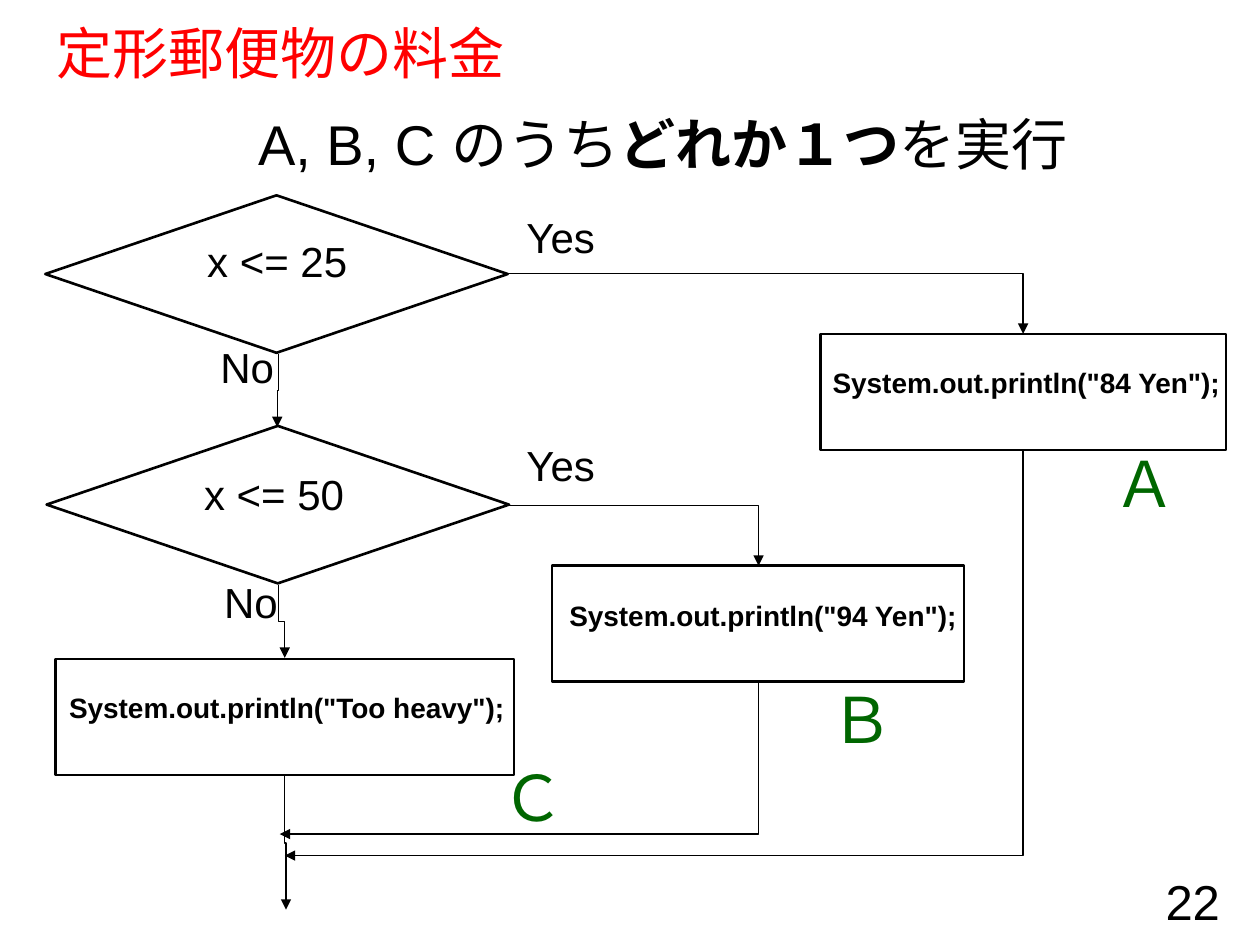
from lxml.etree import SubElement as Sub
from pptx import Presentation
from pptx.dml.color import RGBColor as Rgb
from pptx.enum.shapes import MSO_CONNECTOR as Link, MSO_SHAPE as Shape
from pptx.enum.text import MSO_ANCHOR as Anchor, PP_ALIGN as Align
from pptx.oxml.ns import qn
from pptx.util import Inches, Pt

INK, RED, GREEN = "000000", "FF0000", "006600"


def hue(code):
    """Turn a hex string into a colour."""
    return Rgb.from_string(code)


class Chart:
    """Draw flow chart parts on a grid of 100 columns by 75 rows."""

    face = "Arial"

    def __init__(self, deck):
        """Open a title-only slide and measure the grid cell."""
        self.col = deck.slide_width / 100
        self.row = deck.slide_height / 75
        self.slide = deck.slides.add_slide(deck.slide_layouts[5])
        self.shapes = self.slide.shapes

    def span(self, x, y, w, h):
        """Give a grid box as slide lengths."""
        return [round(n * u) for n, u in zip((x, y, w, h), (self.col, self.row) * 2)]

    def style(self, para, size, tint, bold=False):
        """Format every run of a paragraph."""
        for run in para.runs:
            font = run.font
            font.name, font.size, font.bold = self.face, Pt(size), bold
            font.color.rgb = hue(tint)

    def title(self, text, box):
        """Place and format the title."""
        head = self.shapes.title
        head.left, head.top, head.width, head.height = self.span(*box)
        frame = head.text_frame
        frame.text, frame.vertical_anchor = text, Anchor.MIDDLE
        para = frame.paragraphs[0]
        para.alignment, para.line_spacing = Align.LEFT, 0.9
        self.style(para, 32, RED)

    def text(self, text, box, size=24, tint=INK, bold=False, wrap=False,
             align=Align.LEFT, anchor=Anchor.TOP):
        """Add a text box and return its paragraph."""
        frame = self.shapes.add_textbox(*self.span(*box)).text_frame
        frame.text, frame.word_wrap, frame.vertical_anchor = text, wrap, anchor
        para = frame.paragraphs[0]
        para.alignment = align
        self.style(para, size, tint, bold)
        return para

    def node(self, kind, box):
        """Add an outlined flow chart symbol."""
        node = self.shapes.add_shape(kind, *self.span(*box))
        node.shadow.inherit = False
        node.fill.background()
        node.line.color.rgb, node.line.width = hue(INK), Pt(1.5)

    def test(self, text, box, label):
        """Add a decision with its condition."""
        self.node(Shape.FLOWCHART_DECISION, box)
        self.text(text, label, wrap=True, align=Align.CENTER)

    def step(self, code, box, label, mark, spot):
        """Add a process with its code and its letter."""
        self.node(Shape.FLOWCHART_PROCESS, box)
        self.text(code, label, 16, bold=True)
        self.text(mark, (*spot, 7.1, 7.1), 36, GREEN)

    def arrow(self, start, end, bends=1, down=True):
        """Add an elbow arrow that leaves downward or to the right."""
        x, y, r, b = self.span(*start, *end)
        wide, tall = abs(r - x), abs(b - y)
        left, top = min(x, r), min(y, b)
        if down:
            left, top = left + (wide - tall) // 2, top + (tall - wide) // 2
            wide, tall = tall, wide
        link = self.shapes.add_connector(Link.ELBOW, left, top, left + wide, top + tall)
        link.line.color.rgb, link.line.width = hue(INK), Pt(0.75)
        prop = link.element.spPr
        prop.find(qn("a:prstGeom")).set("prst", f"bentConnector{bends + 1}")
        if down:
            form = prop.find(qn("a:xfrm"))
            form.set("rot", str(90 * 60000))
            if r > x:
                form.set("flipV", "1")
        Sub(prop.find(qn("a:ln")), qn("a:tailEnd"), type="triangle")
        Sub(prop, qn("a:effectLst"))


def main():
    """Build the postage flow chart."""
    deck = Presentation()
    deck.slide_width, deck.slide_height = Inches(10), Inches(7.5)
    flow = Chart(deck)
    flow.title("定形郵便物の料金", (3.5, 1.9, 92.5, 5.1))

    lead = flow.text("A, B, C のうち", (19.5, 8.2, 70, 6.4), 32)
    for part in ("どれか１つ", "を実行"):
        lead.add_run().text = part
    flow.style(lead, 32, INK)
    lead.runs[1].font.bold = True

    flow.test("x <= 25", (3.6, 15.5, 36.7, 12.5), (10.2, 18.2, 23.6, 7))
    flow.test("x <= 50", (3.7, 33.8, 36.7, 12.5), (9.5, 36.7, 24.5, 7))

    steps = (
        ('System.out.println("84 Yen");', (65.1, 26.5, 32.2, 9.2),
         (65.1, 28.5, 34, 5.7), "Ａ", (87.4, 34.8)),
        ('System.out.println("94 Yen");', (43.8, 44.9, 32.7, 9.2),
         (44.2, 47, 34, 5.7), "Ｂ", (64.9, 53.5)),
        ('System.out.println("Too heavy");', (4.4, 52.3, 36.4, 9.2),
         (4.5, 54.3, 38, 4), "Ｃ", (38.8, 59.7)),
    )
    for step in steps:
        flow.step(*step)

    for word, x, y in (("Yes", 40.8, 16.3), ("Yes", 40.8, 34.4),
                       ("No", 16.5, 26.6), ("No", 16.8, 45.3)):
        flow.text(word, (x, y, 8, 4))

    flow.arrow((40.3, 21.7), (81.2, 26.5), down=False)
    flow.arrow((40.4, 40.1), (60.2, 44.9), down=False)
    flow.arrow((22.1, 28.1), (22, 33.9), 2)
    flow.arrow((22.1, 46.4), (22.6, 52.2), 2)
    flow.arrow((22.6, 61.6), (22.7, 72.2), 2)
    flow.arrow((60.2, 54.1), (22.2, 66.2))
    flow.arrow((81.2, 35.7), (22.6, 67.9))

    flow.text("22", (75.3, 69.5, 22.5, 4), 28, wrap=True,
              align=Align.RIGHT, anchor=Anchor.MIDDLE)
    deck.save("out.pptx")


if __name__ == "__main__":
    main()
